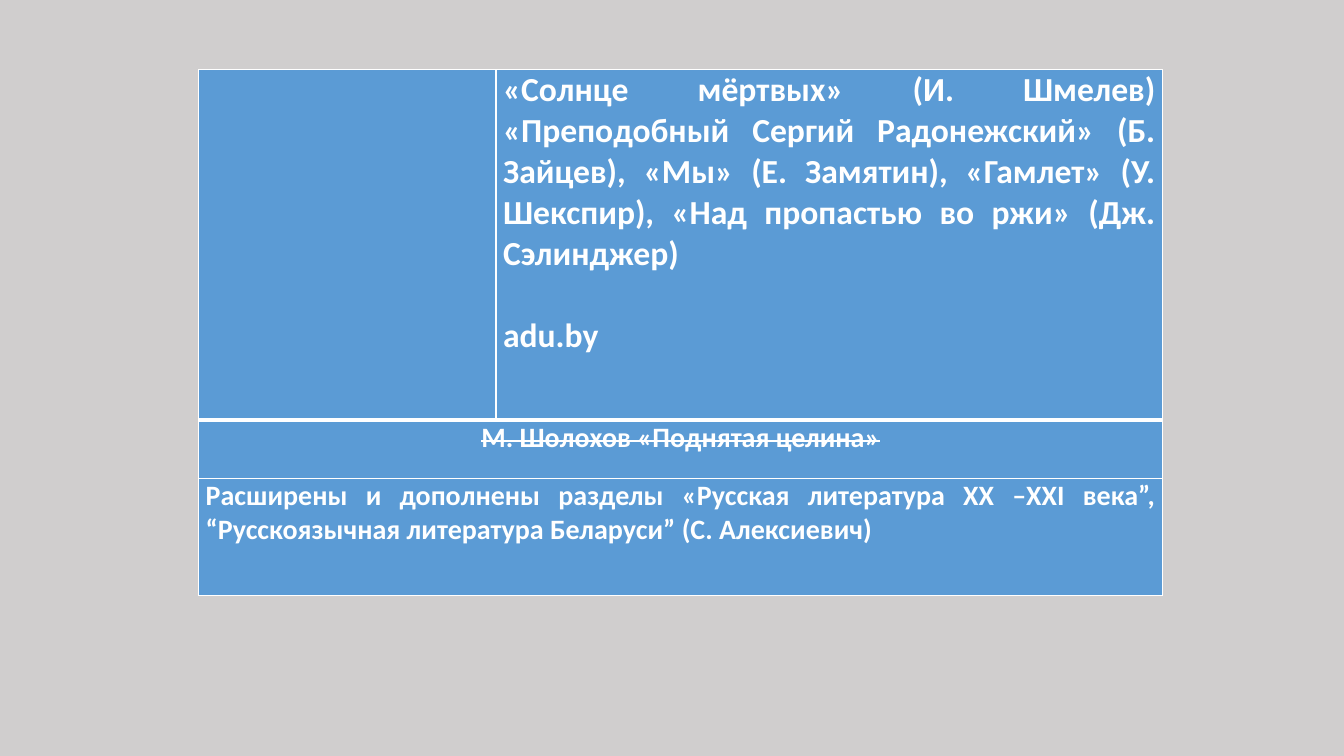
from dataclasses import dataclass

from pptx import Presentation
from pptx.dml.color import RGBColor
from pptx.enum.text import PP_ALIGN as Align
from pptx.oxml.ns import qn
from pptx.util import Inches, Pt
from lxml.etree import SubElement


@dataclass(frozen=True)
class Theme:
    font: str = "Calibri"
    background: str = "D0CECE"
    cell: str = "5B9BD5"
    white: str = "FFFFFF"
    large: int = 24
    small: int = 20
    blank_line: float = 29.3
    thin: int = 1
    thick: int = 3


THEME = Theme()
COLUMN_WIDTHS = (2.95, 6.61)
ROW_HEIGHTS = (3.48, 0.58, 1.16)
BOOKS = (
    "«Солнце мёртвых» (И. Шмелев) «Преподобный Сергий Радонежский» "
    "(Б. Зайцев), «Мы» (Е. Замятин), «Гамлет» (У. Шекспир), "
    "«Над пропастью во ржи» (Дж. Сэлинджер)"
)
SITE = "adu.by"
REMOVED_BOOK = "М. Шолохов «Поднятая целина»"
EXPANDED_SECTIONS = (
    "Расширены и дополнены разделы «Русская литература XX –XXI века”, "
    "“Русскоязычная литература Беларуси” (С. Алексиевич)"
)


def paint_background(slide):
    fill = slide.background.fill
    fill.solid()
    fill.fore_color.rgb = RGBColor.from_string(THEME.background)


def set_border(cell, side, width):
    properties = cell._tc.get_or_add_tcPr()
    line = SubElement(properties, qn(f"a:ln{side}"), w=str(Pt(width)))
    solid = SubElement(line, qn("a:solidFill"))
    SubElement(solid, qn("a:srgbClr"), val=THEME.white)


def style_cell(cell, top, bottom):
    widths = {"L": THEME.thin, "R": THEME.thin, "T": top, "B": bottom}
    for side, width in widths.items():
        set_border(cell, side, width)
    cell.fill.solid()
    cell.fill.fore_color.rgb = RGBColor.from_string(THEME.cell)
    cell.margin_left = cell.margin_right = Inches(0.07)
    cell.margin_top = cell.margin_bottom = 0


def write_paragraph(paragraph, text, size, align=Align.JUSTIFY, strike=False):
    paragraph.alignment = align
    run = paragraph.add_run()
    run.text = text
    font = run.font
    font.name = THEME.font
    font.size = Pt(size)
    font.bold = True
    font.color.rgb = RGBColor.from_string(THEME.white)
    if strike:
        run._r.get_or_add_rPr().set("strike", "sngStrike")


def add_program_table(slide):
    frame = slide.shapes.add_table(
        len(ROW_HEIGHTS), len(COLUMN_WIDTHS), Inches(1.97), Inches(0.69),
        Inches(sum(COLUMN_WIDTHS)), Inches(sum(ROW_HEIGHTS)),
    )
    table = frame.table
    table.first_row = table.horz_banding = False
    for column, width in zip(table.columns, COLUMN_WIDTHS):
        column.width = Inches(width)
    for row, height in zip(table.rows, ROW_HEIGHTS):
        row.height = Inches(height)
    for index in (1, 2):
        table.cell(index, 0).merge(table.cell(index, 1))
    for index, row in enumerate(table.rows):
        top = THEME.thick if index == 1 else THEME.thin
        bottom = THEME.thick if index == 0 else THEME.thin
        for cell in row.cells:
            style_cell(cell, top, bottom)
    return table


def fill_program_table(table):
    books = table.cell(0, 1).text_frame
    write_paragraph(books.paragraphs[0], BOOKS, THEME.large)
    site = books.add_paragraph()
    site.space_before = Pt(THEME.blank_line)
    write_paragraph(site, SITE, THEME.large)
    removed = table.cell(1, 0).text_frame.paragraphs[0]
    write_paragraph(removed, REMOVED_BOOK, THEME.small, Align.CENTER, strike=True)
    expanded = table.cell(2, 0).text_frame.paragraphs[0]
    write_paragraph(expanded, EXPANDED_SECTIONS, THEME.small)


def main():
    presentation = Presentation()
    presentation.slide_width = Inches(13.33)
    presentation.slide_height = Inches(7.5)
    slide = presentation.slides.add_slide(presentation.slide_layouts[6])
    paint_background(slide)
    fill_program_table(add_program_table(slide))
    presentation.save("out.pptx")


if __name__ == "__main__":
    main()
